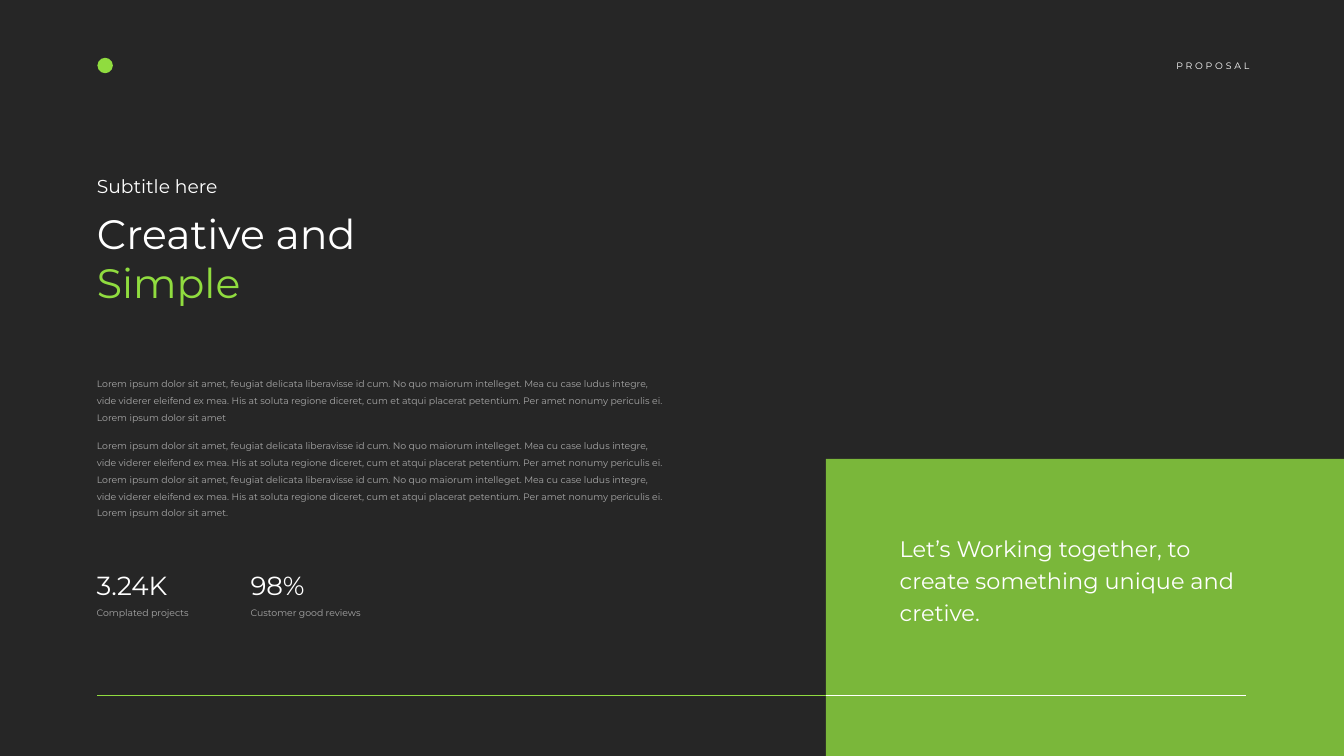
from collections import namedtuple
from dataclasses import dataclass

from lxml import etree
from pptx import Presentation
from pptx.dml.color import RGBColor
from pptx.enum.shapes import MSO_CONNECTOR, MSO_SHAPE
from pptx.enum.text import MSO_ANCHOR, MSO_AUTO_SIZE, PP_ALIGN
from pptx.oxml.ns import qn
from pptx.util import Inches, Pt

STRAIGHT = MSO_CONNECTOR.STRAIGHT
RECT, OVAL = MSO_SHAPE.RECTANGLE, MSO_SHAPE.OVAL
LEFT, RIGHT = PP_ALIGN.LEFT, PP_ALIGN.RIGHT
TOP = MSO_ANCHOR.TOP
FIT_SHAPE = MSO_AUTO_SIZE.SHAPE_TO_FIT_TEXT

Box = namedtuple("Box", "x y w h")


@dataclass(frozen=True)
class Theme:
    font: str = "Montserrat"
    dark: RGBColor = RGBColor(0x26, 0x26, 0x26)
    green: RGBColor = RGBColor(0x90, 0xDC, 0x3F)
    white: RGBColor = RGBColor(0xFF, 0xFF, 0xFF)
    grey: RGBColor = RGBColor(0xA6, 0xA6, 0xA6)
    title: int = 44
    figure: int = 28
    quote: int = 24
    subtitle: int = 20
    small: int = 10
    rule: float = 1.5


THEME = Theme()
LOREM = (
    "Lorem ipsum dolor sit amet, feugiat delicata liberavisse id cum. "
    "No quo maiorum intelleget. Mea cu case ludus integre, vide viderer "
    "eleifend ex mea. His at soluta regione diceret, cum et atqui placerat "
    "petentium. Per amet nonumy periculis ei. "
)
BODY = [LOREM + "Lorem ipsum dolor sit amet",
        LOREM * 2 + "Lorem ipsum dolor sit amet."]
STATS = [("3.24K", "Complated projects"), ("98%", "Customer good reviews")]
QUOTE = "Let’s Working together, to create something unique and cretive."


# Shared helpers
def inches(box):
    return [Inches(v) for v in box]


def prepare(sp):
    tf = sp.text_frame
    tf.word_wrap = True
    tf.auto_size = FIT_SHAPE
    tf.vertical_anchor = TOP
    return tf


def place(sp, box):
    sp.left, sp.top, sp.width, sp.height = inches(box)
    return prepare(sp)


def text_box(s, box):
    return prepare(s.shapes.add_textbox(*inches(box)))


def paragraph(tf, text, size, color, first=False, before=0, line=1.0, align=LEFT):
    p = tf.paragraphs[0] if first else tf.add_paragraph()
    p.alignment, p.space_before, p.line_spacing = align, Pt(before), line
    p.font.name, p.font.size = THEME.font, Pt(size)
    p.font.color.rgb = color
    p.add_run().text = text
    return p


def solid(s, kind, box, color):
    sp = s.shapes.add_shape(kind, *inches(box))
    sp.shadow.inherit = False
    sp.fill.solid()
    sp.fill.fore_color.rgb = color
    sp.line.fill.background()
    return sp


def rule(s, x1, x2, y, color):
    line = s.shapes.add_connector(STRAIGHT, *inches((x1, y, x2, y)))
    line.line.color.rgb = color
    line.line.width = Pt(THEME.rule)
    etree.SubElement(line._element.spPr, qn("a:effectLst"))


# Regions
def header(s, box):
    """Plain mark on the left, section label on the right."""
    solid(s, OVAL, (box.x, box.y + 0.02, 0.23, 0.23), THEME.green)
    width = 2.36
    tf = text_box(s, (box.x + box.w - width, box.y, width, box.h))
    p = paragraph(tf, "PROPOSAL", THEME.small, THEME.white, first=True, align=RIGHT)
    p.runs[0].font._element.set("spc", "300")


def heading(s, box):
    tf = place(s.shapes.title, box)
    paragraph(tf, "Subtitle here", THEME.subtitle, THEME.white, first=True)
    p = paragraph(tf, "Creative and ", THEME.title, THEME.white, before=12)
    r = p.add_run()
    r.text = "Simple"
    r.font.color.rgb = THEME.green


def body(s, box):
    tf = place(s.placeholders[1], box)
    for i, text in enumerate(BODY):
        p = paragraph(tf, text, THEME.small, THEME.grey, first=i == 0,
                      before=12, line=1.5)
        pPr = p._p.get_or_add_pPr()
        pPr.set("marL", "0")
        pPr.set("indent", "0")
        # A bullet mark must come before the default run properties
        pPr.find(qn("a:defRPr")).addprevious(etree.Element(qn("a:buNone")))


def stats(s, box):
    gap = 0.24
    width = (box.w - gap * (len(STATS) - 1)) / len(STATS)
    for i, (figure, label) in enumerate(STATS):
        tf = text_box(s, (box.x + i * (width + gap), box.y, width, box.h))
        paragraph(tf, figure, THEME.figure, THEME.white, first=True)
        paragraph(tf, label, THEME.small, THEME.grey, before=6)


def quote_panel(s, box):
    panel = solid(s, RECT, box, THEME.green)
    color = panel._element.spPr.find(qn("a:solidFill"))[0]
    etree.SubElement(color, qn("a:alpha"), val="80000")
    tf = text_box(s, (box.x + 1, box.y + 1, 5.28, 1.51))
    paragraph(tf, QUOTE, THEME.quote, THEME.white, first=True, line=1.2)


def main():
    prs = Presentation()
    prs.slide_width, prs.slide_height = Inches(20), Inches(11.25)
    s = prs.slides.add_slide(prs.slide_layouts[1])
    s.background.fill.solid()
    s.background.fill.fore_color.rgb = THEME.dark

    # The base rule runs under the panel, its white part over it
    panel = Box(12.29, 6.83, 7.71, 4.42)
    rule_y, rule_end = 10.35, 18.54
    rule(s, 1.45, rule_end, rule_y, THEME.green)
    header(s, Box(1.45, 0.84, 17.24, 0.27))
    quote_panel(s, panel)
    rule(s, panel.x, rule_end, rule_y, THEME.white)

    # Left column
    heading(s, Box(1.34, 2.55, 5.24, 2.09))
    body(s, Box(1.34, 5.5, 8.66, 2.26))
    stats(s, Box(1.34, 8.43, 4.34, 0.84))
    prs.save("out.pptx")


if __name__ == "__main__":
    main()
